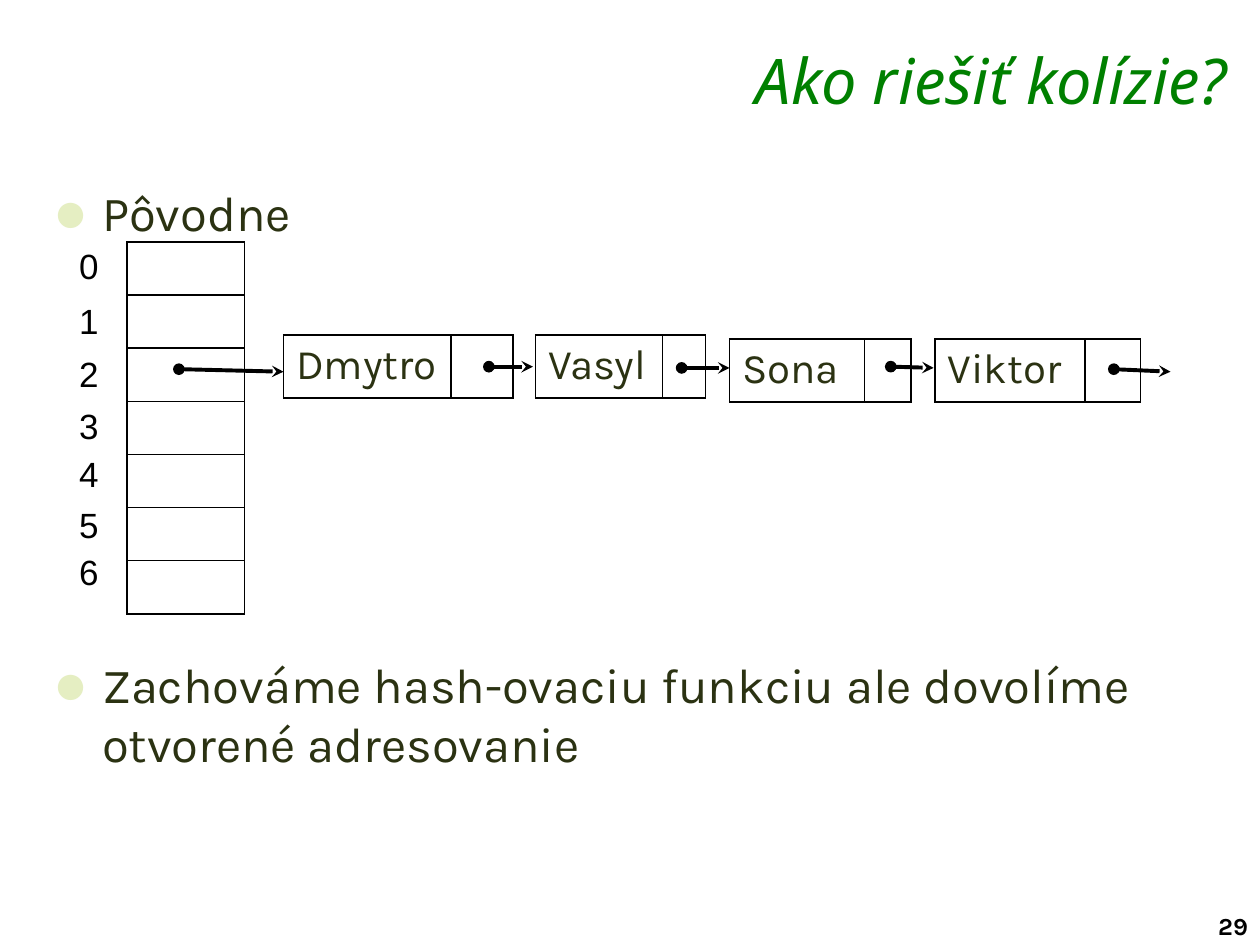
from collections import namedtuple

from lxml import etree
from pptx import Presentation
from pptx.dml.color import RGBColor
from pptx.enum.shapes import MSO_CONNECTOR
from pptx.enum.text import MSO_ANCHOR, MSO_AUTO_SIZE, PP_ALIGN
from pptx.oxml.ns import qn
from pptx.util import Inches, Pt

STRAIGHT = MSO_CONNECTOR.STRAIGHT
TOP = MSO_ANCHOR.TOP
NO_AUTOFIT = MSO_AUTO_SIZE.NONE
LEFT, RIGHT = PP_ALIGN.LEFT, PP_ALIGN.RIGHT

BLACK = RGBColor(0x00, 0x00, 0x00)
WHITE = RGBColor(0xFF, 0xFF, 0xFF)
GREEN = RGBColor(0x00, 0x80, 0x00)
OLIVE = RGBColor(0x2B, 0x32, 0x12)
PALE_GREEN = RGBColor(0xE5, 0xEE, 0xC2)

SLIDE_WIDTH, SLIDE_HEIGHT = Inches(10), Inches(7.5)
UNIT = SLIDE_WIDTH / 100  # the grid has 100 columns and 75 rows

TITLE_FONT = {"name": "Noto Sans", "size": Pt(36), "italic": True, "bold": False}
BODY_FONT = {"name": "Karla", "size": Pt(28)}
NODE_FONT = {"name": "Karla", "size": Pt(24)}
INDEX_FONT = {"name": "Arial", "size": Pt(20)}
NUMBER_FONT = {"name": "Karla", "size": Pt(14), "bold": True}

Box = namedtuple("Box", "left top width height")
# Pointer start and end are measured from the top left corner of the node.
Node = namedtuple("Node", "name left top columns start end")

INDEX_TOPS = [18.9, 23.3, 27.5, 31.6, 35.4, 39.5, 43.2]
BUCKET_HEIGHT = 4.22
NODE_HEIGHT = 5
NODES = [
    Node("Dmytro", 22.5, 26.6, (13.3, 4.9), (16.3, 2.5), (19.8, 2.5)),
    Node("Vasyl", 42.5, 26.6, (10.1, 3.4), (11.6, 2.6), (15.4, 2.6)),
    Node("Sona", 57.9, 26.9, (10.7, 3.7), (12.8, 2.2), (16.2, 2.3)),
    Node("Viktor", 74.2, 26.9, (11.9, 4.4), (14.2, 2.4), (18.7, 2.6)),
]


def grid(*lengths):
    return [round(length * UNIT) for length in lengths]


def format_font(font, settings, color):
    for attribute, value in settings.items():
        setattr(font, attribute, value)
    font.color.rgb = color


def place(shape, box):
    shape.left, shape.top, shape.width, shape.height = grid(*box)


def add_label(slide, text, box, settings):
    frame = slide.shapes.add_textbox(*grid(*box)).text_frame
    frame.word_wrap = True
    paragraph = frame.paragraphs[0]
    paragraph.text = text
    paragraph.alignment = LEFT
    format_font(paragraph.font, settings, BLACK)


def add_bullet(paragraph):
    properties = paragraph._p.get_or_add_pPr()
    properties.set("marL", str(Inches(0.39)))
    properties.set("indent", str(-Inches(0.39)))
    color = etree.SubElement(properties, qn("a:buClr"))
    etree.SubElement(color, qn("a:srgbClr"), val=str(PALE_GREEN))
    etree.SubElement(properties, qn("a:buSzPct"), val="120000")
    etree.SubElement(properties, qn("a:buChar"), char="●")


def border_cell(cell):
    properties = cell._tc.get_or_add_tcPr()
    for position, side in enumerate(("a:lnL", "a:lnR", "a:lnT", "a:lnB")):
        line = etree.Element(qn(side), w=str(Pt(1)))
        fill = etree.SubElement(line, qn("a:solidFill"))
        etree.SubElement(fill, qn("a:srgbClr"), val=str(BLACK))
        properties.insert(position, line)


def add_grid_table(slide, left, top, columns, rows):
    """Add a plain white table with black borders and the given track sizes."""
    box = Box(left, top, sum(columns), sum(rows))
    table = slide.shapes.add_table(len(rows), len(columns), *grid(*box)).table
    table.first_row = table.horz_banding = False
    for column, width in zip(table.columns, grid(*columns)):
        column.width = width
    for row, height in zip(table.rows, grid(*rows)):
        row.height = height
    for cell in table.iter_cells():
        cell.fill.solid()
        cell.fill.fore_color.rgb = WHITE
        border_cell(cell)
    return table


def add_pointer(slide, start, end):
    pointer = slide.shapes.add_connector(STRAIGHT, *grid(*start, *end))
    pointer.line.color.rgb = BLACK
    pointer.line.width = Pt(2.25)
    line = pointer.line._get_or_add_ln()
    etree.SubElement(line, qn("a:headEnd"), type="oval")
    etree.SubElement(line, qn("a:tailEnd"), type="stealth")
    etree.SubElement(pointer._element.spPr, qn("a:effectLst"))


def fill_title(slide, box):
    title = slide.shapes.title
    place(title, box)
    frame = title.text_frame
    frame.text = "Ako riešiť kolízie?"
    frame.auto_size = NO_AUTOFIT
    frame.vertical_anchor = TOP
    frame.margin_top = Inches(0.02)
    paragraph = frame.paragraphs[0]
    paragraph.alignment = RIGHT
    format_font(paragraph.font, TITLE_FONT, GREEN)


def fill_body(slide, box):
    body = slide.placeholders[1]
    place(body, box)
    frame = body.text_frame
    frame.text = "Pôvodne\nZachováme hash-ovaciu funkciu ale dovolíme otvorené adresovanie"
    frame.auto_size = NO_AUTOFIT
    for paragraph, space_before in zip(frame.paragraphs, (0, 236)):
        add_bullet(paragraph)
        paragraph.space_before = Pt(space_before)
        paragraph.space_after = Pt(0)
        format_font(paragraph.font, BODY_FONT, OLIVE)


def add_buckets(slide, left, top, width):
    """Add the hash table with its row numbers and the pointer to the chain."""
    add_grid_table(slide, left, top, [width], [BUCKET_HEIGHT] * len(INDEX_TOPS))
    for index, label_top in enumerate(INDEX_TOPS):
        add_label(slide, str(index), Box(left - 4.8, label_top, 3.6, 4.4), INDEX_FONT)
    add_pointer(slide, (left + 4.1, top + 10.1), (NODES[0].left, top + 10.3))


def add_node(slide, node):
    table = add_grid_table(slide, node.left, node.top, node.columns, [NODE_HEIGHT])
    paragraph = table.cell(0, 0).text_frame.paragraphs[0]
    paragraph.text = node.name
    format_font(paragraph.font, NODE_FONT, OLIVE)
    start, end = [(node.left + x, node.top + y) for x, y in (node.start, node.end)]
    add_pointer(slide, start, end)


def main():
    presentation = Presentation()
    presentation.slide_width, presentation.slide_height = SLIDE_WIDTH, SLIDE_HEIGHT
    slide = presentation.slides.add_slide(presentation.slide_layouts[1])
    fill_title(slide, Box(22.9, 3.1, 75.5, 5.8))
    fill_body(slide, Box(3.2, 14, 93.8, 59.2))
    add_buckets(slide, 10.1, 19.2, 9.3)
    for node in NODES:
        add_node(slide, node)
    add_label(slide, "29", Box(95.7, 71.8, 5.1, 3.3), NUMBER_FONT)
    presentation.save("out.pptx")


if __name__ == "__main__":
    main()
